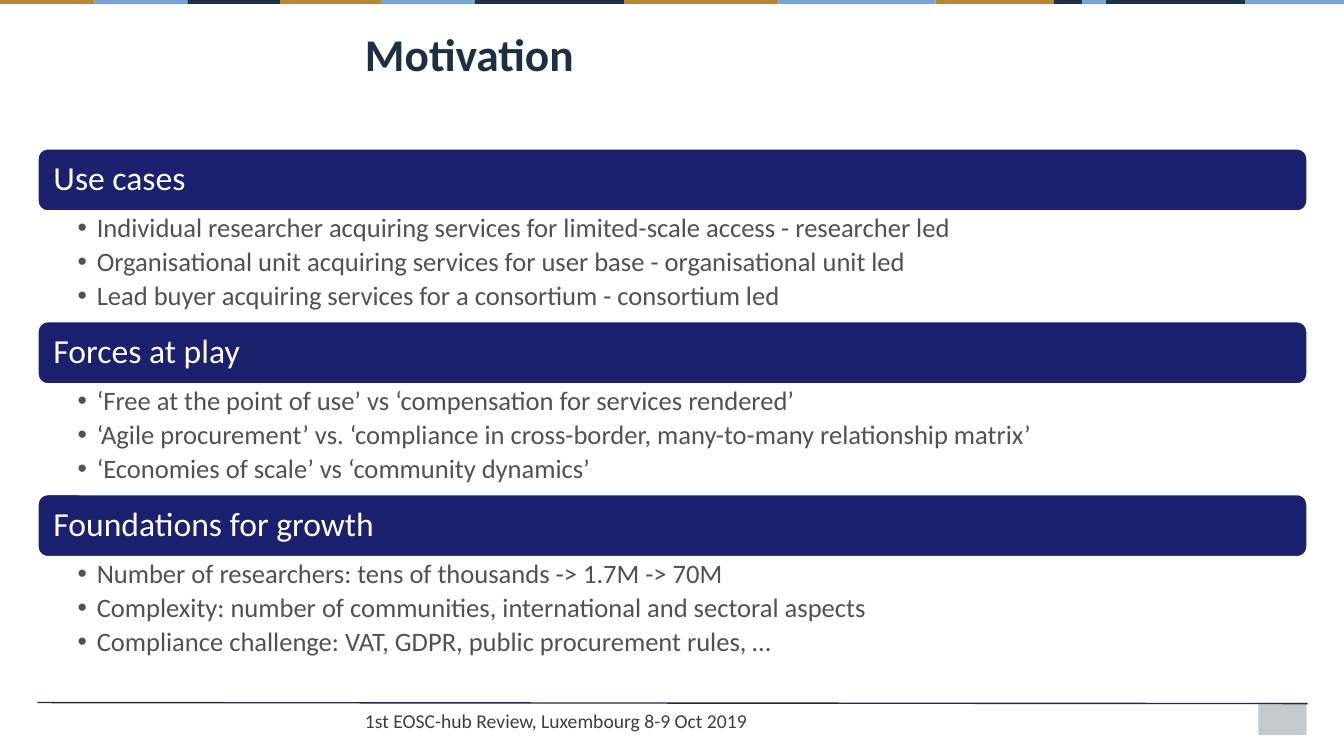
from itertools import pairwise

from lxml.etree import SubElement
from pptx import Presentation
from pptx.dml.color import RGBColor
from pptx.enum.shapes import MSO_CONNECTOR, MSO_SHAPE
from pptx.enum.text import MSO_ANCHOR, PP_ALIGN
from pptx.oxml.ns import qn
from pptx.util import Inches, Pt

COLOURS = {
    "ink": "1D2F45", "navy": "1C3046", "gold": "B5892D", "blue": "75A5D8",
    "bar": "1B216E", "white": "FFFFFF", "body": "515151", "footer": "3D3D3D",
}
STRIP_EDGES = [0, 0.94, 1.86, 2.78, 3.78, 4.71, 6.19, 7.72, 9.28,
               10.45, 10.73, 10.97, 12.35, 13.33]
STRIP_COLOURS = ["gold", "blue", "navy", "gold", "blue", "navy", "gold",
                 "blue", "gold", "navy", "blue", "navy", "blue"]
SECTIONS = [
    ("Use cases", [
        "Individual researcher acquiring services for limited-scale access - researcher led",
        "Organisational unit acquiring services for user base - organisational unit led",
        "Lead buyer acquiring services for a consortium - consortium led",
    ]),
    ("Forces at play", [
        "‘Free at the point of use’ vs ‘compensation for services rendered’",
        "‘Agile procurement’ vs. ‘compliance in cross-border, many-to-many relationship matrix’",
        "‘Economies of scale’ vs ‘community dynamics’",
    ]),
    ("Foundations for growth", [
        "Number of researchers: tens of thousands -> 1.7M -> 70M",
        "Complexity: number of communities, international and sectoral aspects",
        "Compliance challenge: VAT, GDPR, public procurement rules, …",
    ]),
]
LEFT, WIDTH = 0.37, 12.6
FIRST_TOP, SECTION_STEP = 1.47, 1.715
BAR_HEIGHT, LIST_HEIGHT = 0.63, 1.09


class SlideBuilder:
    """Hold the style and the current slide."""

    def __init__(self, page, font="Calibri"):
        self.page = page
        self.font = font

    def colour(self, name):
        return RGBColor.from_string(COLOURS[name])

    def style(self, paragraph, size, colour, bold=False):
        paragraph.alignment = PP_ALIGN.LEFT
        for span in paragraph.runs:
            span.font.name = self.font
            span.font.size = Pt(size)
            span.font.bold = bold
            span.font.color.rgb = self.colour(colour)

    def frame(self, box, insets=(0.1, 0.05, 0.1, 0.05), anchor=MSO_ANCHOR.TOP):
        frame = box.text_frame
        frame.word_wrap = True
        frame.vertical_anchor = anchor
        (frame.margin_left, frame.margin_top,
         frame.margin_right, frame.margin_bottom) = map(Inches, insets)
        return frame

    def title(self, text, *place):
        box = self.page.shapes.title
        box.left, box.top, box.width, box.height = map(Inches, place)
        frame = self.frame(box)
        frame.text = text
        self.style(frame.paragraphs[0], 32.4, "ink", bold=True)

    def text(self, text, size, colour, *place):
        box = self.page.shapes.add_textbox(*map(Inches, place))
        frame = self.frame(box)
        frame.text = text
        self.style(frame.paragraphs[0], size, colour)

    def block(self, colour, *place, shape=MSO_SHAPE.RECTANGLE, alpha=None):
        box = self.page.shapes.add_shape(shape, *map(Inches, place))
        box.shadow.inherit = False
        box.fill.solid()
        box.fill.fore_color.rgb = self.colour(colour)
        box.line.fill.background()
        if alpha is not None:
            fill = box.fill._xPr.find(qn("a:solidFill"))
            SubElement(fill[0], qn("a:alpha"), val=str(alpha * 1000))
        return box

    def bar(self, text, *place):
        box = self.block("bar", *place, shape=MSO_SHAPE.ROUNDED_RECTANGLE)
        box.line.color.rgb = self.colour("white")
        box.line.width = Pt(2)
        frame = self.frame(box, (0.13, 0.1, 0.13, 0.1), MSO_ANCHOR.MIDDLE)
        frame.text = text
        frame.paragraphs[0].line_spacing = 0.9
        self.style(frame.paragraphs[0], 24, "white")

    def bullets(self, lines, *place):
        box = self.page.shapes.add_textbox(*map(Inches, place))
        frame = self.frame(box, (0.4, 0.03, 0.19, 0.03))
        frame.text = "\n".join(lines)
        for para in frame.paragraphs:
            para.level = 1
            para.line_spacing = 0.9
            para.space_after = Pt(3.8)
            properties = para._p.get_or_add_pPr()
            properties.set("marL", str(Inches(0.19)))
            properties.set("indent", str(Inches(-0.19)))
            SubElement(properties, qn("a:buFont"), typeface="Arial")
            SubElement(properties, qn("a:buChar"), char="•")
            self.style(para, 19, "body")

    def line(self, colour, *ends):
        line = self.page.shapes.add_connector(
            MSO_CONNECTOR.STRAIGHT, *map(Inches, ends))
        line.line.color.rgb = self.colour(colour)
        line.line.width = Pt(1)
        SubElement(line._element.spPr, qn("a:effectLst"))


def main():
    deck = Presentation()
    deck.slide_width, deck.slide_height = Inches(13.33), Inches(7.5)
    builder = SlideBuilder(deck.slides.add_slide(deck.slide_layouts[5]))

    builder.block("ink", 12.48, 6.97, 0.48, 0.32, alpha=26)
    builder.line("ink", 12.97, 6.98, 0.37, 6.97)
    for (start, end), colour in zip(pairwise(STRIP_EDGES), STRIP_COLOURS):
        builder.block(colour, start, 0, end - start, 0.04)

    for index, (heading, lines) in enumerate(SECTIONS):
        top = FIRST_TOP + index * SECTION_STEP
        builder.bar(heading, LEFT, top, WIDTH, BAR_HEIGHT)
        builder.bullets(lines, LEFT, top + BAR_HEIGHT, WIDTH, LIST_HEIGHT)

    builder.title("Motivation", 3.52, 0.21, 9.45, 0.59)
    builder.text("1st EOSC-hub Review, Luxembourg 8-9 Oct 2019", 14, "footer",
                 3.52, 6.98, 5.98, 0.31)
    deck.save("out.pptx")


if __name__ == "__main__":
    main()
